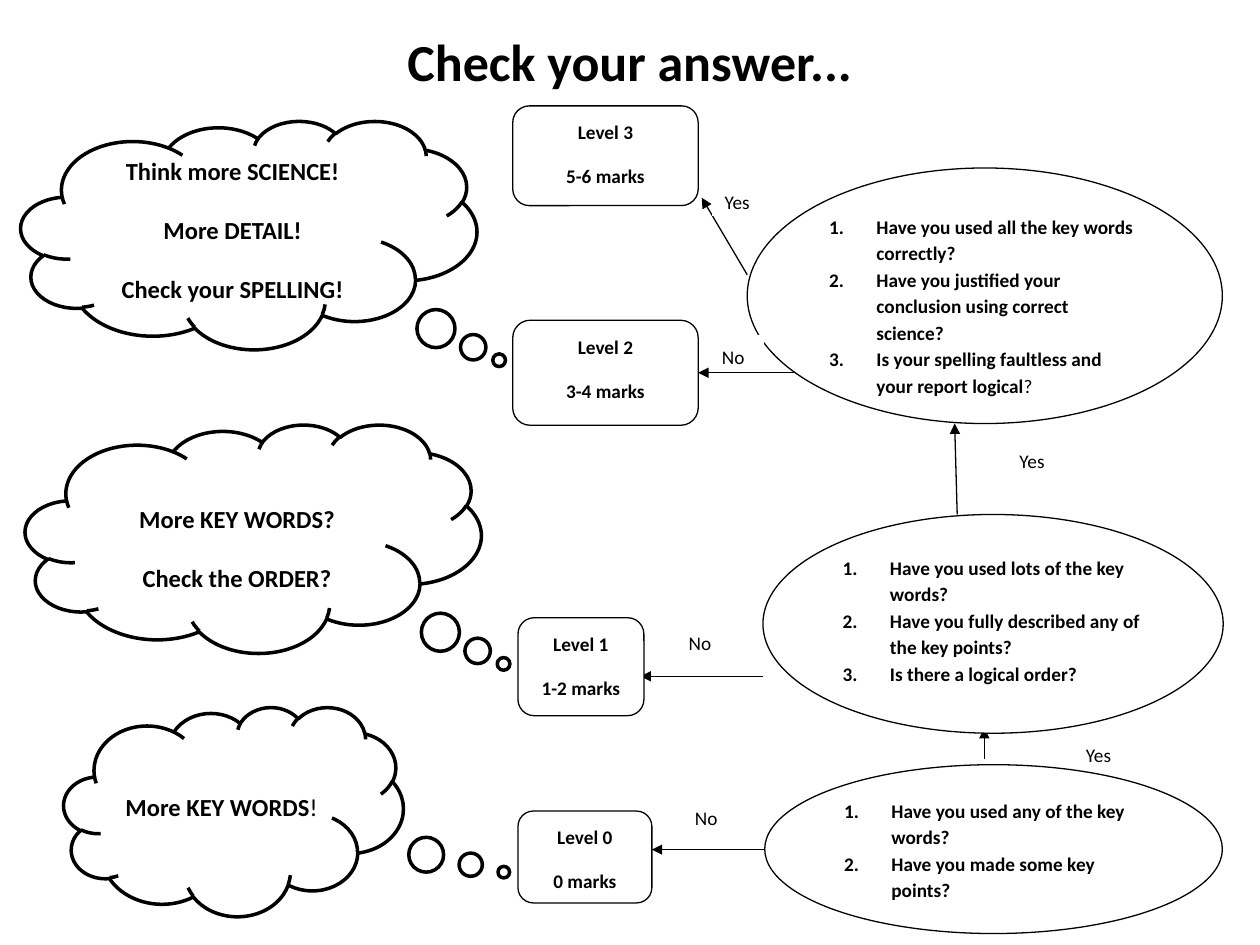
from lxml.etree import SubElement
from pptx import Presentation
from pptx.dml.color import RGBColor
from pptx.enum.shapes import MSO_CONNECTOR, MSO_SHAPE
from pptx.enum.text import MSO_ANCHOR, MSO_AUTO_SIZE, PP_ALIGN
from pptx.oxml.ns import qn
from pptx.util import Pt

COLORS = {"ink": "000000", "paper": "FFFFFF"}
FONT = "Calibri"
RIGHT_SIDE = 3
LIST_INDENT = Pt(27)

LEVEL_FORMAT = {"alignment": PP_ALIGN.CENTER, "line_spacing": 1.15, "space_after": Pt(10)}
LABEL_FORMAT = {"alignment": PP_ALIGN.LEFT, "line_spacing": 1.15, "space_after": Pt(10)}
LIST_FORMAT = {"alignment": PP_ALIGN.LEFT, "line_spacing": 1.15, "space_after": Pt(0)}
CLOUD_FORMAT = {"alignment": PP_ALIGN.CENTER}
TITLE_FORMAT = {"alignment": PP_ALIGN.CENTER}

STAGES = [
    {
        "questions": ["Have you used any of the key words?", "Have you made some key points?"],
        "oval": (437, 437, 261.5, 96.5),
        "level": ("Level 0", "0 marks"),
        "box": (296, 463.5, 76.5, 52.5),
        "no_line": (437, 485.5, 372.5, 485.5),
        "no_label": (390, 455),
        "yes_line": (562.5, 433.5, 562.5, 416),
        "yes_label": (613.5, 419),
    },
    {
        "questions": [
            "Have you used lots of the key words?",
            "Have you fully described any of the key points?",
            "Is there a logical order?",
        ],
        "oval": (436, 294, 263, 125),
        "level": ("Level 1", "1-2 marks"),
        "box": (296, 353, 72, 56),
        "no_line": (436, 386.5, 366, 386.5),
        "no_label": (386.5, 355.5),
        "yes_line": (547, 294, 545.5, 242),
        "yes_label": (575.5, 251.5),
    },
    {
        "questions": [
            "Have you used all the key words correctly?",
            "Have you justified your conclusion using correct science?",
            ("Is your spelling faultless and your report logical", "?"),
        ],
        "oval": (427, 96, 271.5, 146),
        "level": ("Level 2", "3-4 marks"),
        "box": (293, 183, 106, 60),
        "no_line": (454.5, 213, 399, 213),
        "no_label": (405.5, 192),
        "yes_line": (427, 157, 401, 113),
        "yes_label": (407, 103),
    },
]

CLOUDS = [
    ((36.5, 404, 194, 119.5), (0.796, 0.29), [("More KEY WORDS", "!")], 3.6),
    ((14.5, 242.5, 260.5, 130.5), (0.549, 0.549), ["More KEY WORDS?", "Check the ORDER?"], 20.6),
    (
        (12, 69, 260.5, 130.5),
        (0.549, 0.549),
        ["Think more SCIENCE!", "More DETAIL!", "Check your SPELLING!"],
        3.6,
    ),
]


def color(name):
    return RGBColor.from_string(COLORS[name])


def apply_format(target, values):
    for name, value in values.items():
        setattr(target, name, value)


def write_paragraphs(text_frame, lines, size, paragraph_format, bold=True):
    text_frame.word_wrap = True
    for index, line in enumerate(lines):
        paragraph = text_frame.paragraphs[0] if index == 0 else text_frame.add_paragraph()
        apply_format(paragraph, paragraph_format)
        parts = (line,) if isinstance(line, str) else line
        for position, text in enumerate(parts):
            run = paragraph.add_run()
            run.text = text
            run_format = {"name": FONT, "size": Pt(size), "bold": bold and position == 0}
            apply_format(run.font, run_format)
            run.font.color.rgb = color("ink")


def add_outlined_shape(slide, kind, bounds, fill="paper", line="ink", width=0.75):
    shape = slide.shapes.add_shape(kind, *map(Pt, bounds))
    shape.shadow.inherit = False
    if fill:
        shape.fill.solid()
        shape.fill.fore_color.rgb = color(fill)
    else:
        shape.fill.background()
    shape.line.color.rgb = color(line)
    shape.line.width = Pt(width)
    shape.text_frame.vertical_anchor = MSO_ANCHOR.TOP
    return shape


def add_title(slide, text):
    title = slide.shapes.title
    bounds = {"left": Pt(36), "top": Pt(15), "width": Pt(648), "height": Pt(39)}
    apply_format(title, bounds)
    frame_format = {"vertical_anchor": MSO_ANCHOR.MIDDLE, "auto_size": MSO_AUTO_SIZE.NONE}
    apply_format(title.text_frame, frame_format)
    write_paragraphs(title.text_frame, [text], 29.7, TITLE_FORMAT)


def add_level(slide, lines, bounds):
    box = add_outlined_shape(slide, MSO_SHAPE.ROUNDED_RECTANGLE, bounds)
    write_paragraphs(box.text_frame, lines, 11, LEVEL_FORMAT)
    return box


def add_label(slide, text, position):
    label = add_outlined_shape(slide, MSO_SHAPE.RECTANGLE, (*position, 31, 20), line="paper")
    write_paragraphs(label.text_frame, [text], 11, LABEL_FORMAT, bold=False)


def add_questions(slide, questions, bounds):
    oval = add_outlined_shape(slide, MSO_SHAPE.OVAL, bounds)
    write_paragraphs(oval.text_frame, questions, 11, LIST_FORMAT)
    for paragraph in oval.text_frame.paragraphs:
        properties = paragraph._p.get_or_add_pPr()
        properties.set("marL", str(LIST_INDENT))
        properties.set("indent", str(-LIST_INDENT))
        SubElement(properties, qn("a:buFont"), typeface="+mj-lt")
        SubElement(properties, qn("a:buAutoNum"), type="arabicPeriod")


def add_arrow(slide, points):
    arrow = slide.shapes.add_connector(MSO_CONNECTOR.STRAIGHT, *map(Pt, points))
    arrow.line.color.rgb = color("ink")
    arrow.line.width = Pt(0.75)
    properties = arrow._element.spPr
    SubElement(properties.find(qn("a:ln")), qn("a:tailEnd"), type="triangle")
    SubElement(properties, qn("a:effectLst"))
    return arrow


def add_cloud(slide, bounds, pointer, lines, top_margin):
    cloud = add_outlined_shape(slide, MSO_SHAPE.CLOUD_CALLOUT, bounds, fill=None, width=2)
    for index, value in enumerate(pointer):
        cloud.adjustments[index] = value
    frame_format = {"vertical_anchor": MSO_ANCHOR.MIDDLE, "margin_top": Pt(top_margin)}
    apply_format(cloud.text_frame, frame_format)
    write_paragraphs(cloud.text_frame, lines, 14, CLOUD_FORMAT)
    for paragraph in cloud.text_frame.paragraphs[1:]:
        paragraph.space_before = Pt(17)


def add_stage(slide, stage):
    add_questions(slide, stage["questions"], stage["oval"])
    no_arrow = add_arrow(slide, stage["no_line"])
    box = add_level(slide, stage["level"], stage["box"])
    if no_arrow.end_y == box.top + box.height // 2 and no_arrow.end_x == box.left + box.width:
        no_arrow.end_connect(box, RIGHT_SIDE)
    add_label(slide, "No", stage["no_label"])
    add_arrow(slide, stage["yes_line"])
    add_label(slide, "Yes", stage["yes_label"])


def main():
    presentation = Presentation()
    apply_format(presentation, {"slide_width": Pt(720), "slide_height": Pt(540)})
    slide = presentation.slides.add_slide(presentation.slide_layouts[5])
    add_title(slide, "Check your answer...")
    add_level(slide, ("Level 3", "5-6 marks"), (293, 60.5, 106, 57))
    for stage in STAGES:
        add_stage(slide, stage)
    for cloud in CLOUDS:
        add_cloud(slide, *cloud)
    presentation.save("out.pptx")


if __name__ == "__main__":
    main()
